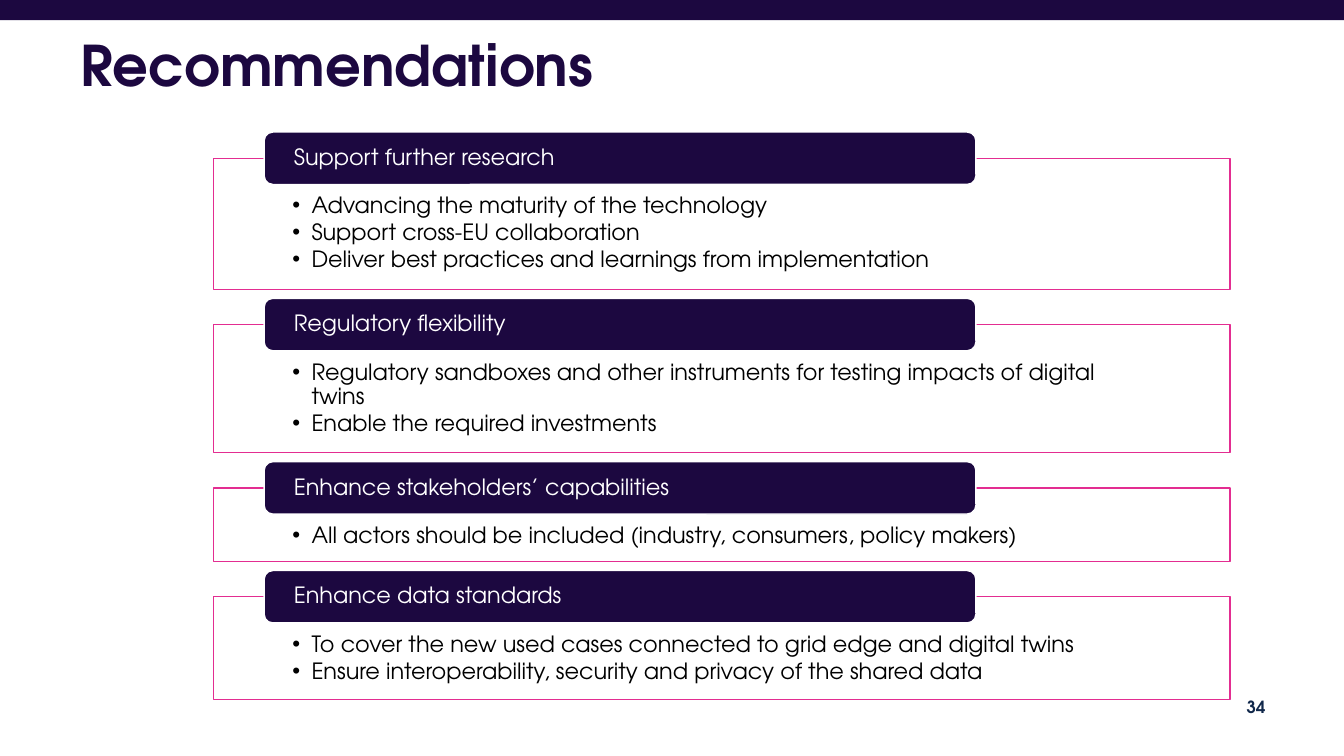
from dataclasses import dataclass

from lxml import etree
from pptx import Presentation
from pptx.dml.color import RGBColor
from pptx.enum import shapes, text
from pptx.oxml import ns
from pptx.util import Inches, Pt


@dataclass(frozen=True)
class Theme:
    font: str = "TeX Gyre Adventor"
    navy: str = "1C0840"
    pink: str = "E32D91"
    white: str = "FFFFFF"
    black: str = "000000"
    number: str = "11284B"
    title_size: int = 40
    body_size: int = 16
    number_size: int = 12


theme = Theme()


def add_panel(page, preset, left, top, width, height, fill, line=None):
    panel = page.shapes.add_shape(
        preset, Inches(left), Inches(top), Inches(width), Inches(height))
    panel.shadow.inherit = False
    panel.fill.solid()
    panel.fill.fore_color.rgb = RGBColor.from_string(fill)
    if line:
        panel.line.color.rgb = RGBColor.from_string(line)
        panel.line.width = Pt(1)
    else:
        panel.line.fill.background()
    return panel


def write(para, words, size, color, bold=False, align=text.PP_ALIGN.LEFT):
    para.text = words
    para.alignment = align
    para.font.name = theme.font
    para.font.size = Pt(size)
    para.font.bold = bold
    para.font.color.rgb = RGBColor.from_string(color)


deck = Presentation()
deck.slide_width, deck.slide_height = Inches(13.33), Inches(7.5)
page = deck.slides.add_slide(deck.slide_layouts[6])

# Top band
add_panel(page, shapes.MSO_SHAPE.RECTANGLE, 0, 0, 13.33, 0.2, theme.navy)

# Title and page number
for words, place, size, color, align in [
    ("Recommendations", (0.7, 0.2, 12.63, 0.96), theme.title_size, theme.navy,
     text.PP_ALIGN.LEFT),
    ("34", (9.65, 6.82, 3, 0.4), theme.number_size, theme.number,
     text.PP_ALIGN.RIGHT),
]:
    box = page.shapes.add_textbox(*map(Inches, place))
    box.text_frame.word_wrap = True
    box.text_frame.vertical_anchor = text.MSO_ANCHOR.MIDDLE
    para = box.text_frame.paragraphs[0]
    para.line_spacing = 0.9
    write(para, words, size, color, True, align)

# Recommendations: heading, frame height, points
recommendations = [
    ("Support further research", 1.3, [
        "Advancing the maturity of the technology",
        "Support cross-EU collaboration",
        "Deliver best practices and learnings from implementation"]),
    ("Regulatory flexibility", 1.27, [
        "Regulatory sandboxes and other instruments for testing impacts of digital twins",
        "Enable the required investments"]),
    ("Enhance stakeholders’ capabilities", 0.73, [
        "All actors should be included (industry, consumers, policy makers)"]),
    ("Enhance data standards", 1.02, [
        "To cover the new used cases connected to grid edge and digital twins",
        "Ensure interoperability, security and privacy of the shared data"]),
]
frame_gap = 0.35
tab_height = 0.52
top = 1.57

for heading, height, points in recommendations:
    # Outlined frame with bulleted points
    frame = add_panel(page, shapes.MSO_SHAPE.RECTANGLE, 2.12, top, 10.08, height,
                      theme.white, theme.pink)
    fill_color = frame.fill._xPr.find(".//" + ns.qn("a:srgbClr"))
    etree.SubElement(fill_color, ns.qn("a:alpha"), val="90000")
    body = frame.text_frame
    body.word_wrap = True
    body.vertical_anchor = text.MSO_ANCHOR.TOP
    body.margin_left = body.margin_right = Inches(0.78)
    body.margin_top, body.margin_bottom = Inches(0.36), Inches(0.12)
    for index, point in enumerate(points):
        para = body.add_paragraph() if index else body.paragraphs[0]
        properties = para._p.get_or_add_pPr()
        properties.set("marL", str(Inches(0.19)))
        properties.set("indent", str(-Inches(0.19)))
        etree.SubElement(properties, ns.qn("a:buFont"), typeface="Arial")
        etree.SubElement(properties, ns.qn("a:buChar"), char="•")
        para.line_spacing = 0.9
        para.space_after = Pt(2)
        write(para, point, theme.body_size, theme.black)

    # Heading tab centred on the frame's top edge
    tab = add_panel(page, shapes.MSO_SHAPE.ROUNDED_RECTANGLE, 2.62,
                    top - tab_height / 2, 7.06, tab_height, theme.navy, theme.white)
    label = tab.text_frame
    label.word_wrap = True
    label.vertical_anchor = text.MSO_ANCHOR.MIDDLE
    label.margin_left = label.margin_right = Inches(0.27)
    label.margin_top = label.margin_bottom = 0
    para = label.paragraphs[0]
    para.line_spacing = 0.9
    write(para, heading, theme.body_size, theme.white)

    top += height + frame_gap

deck.save("out.pptx")
